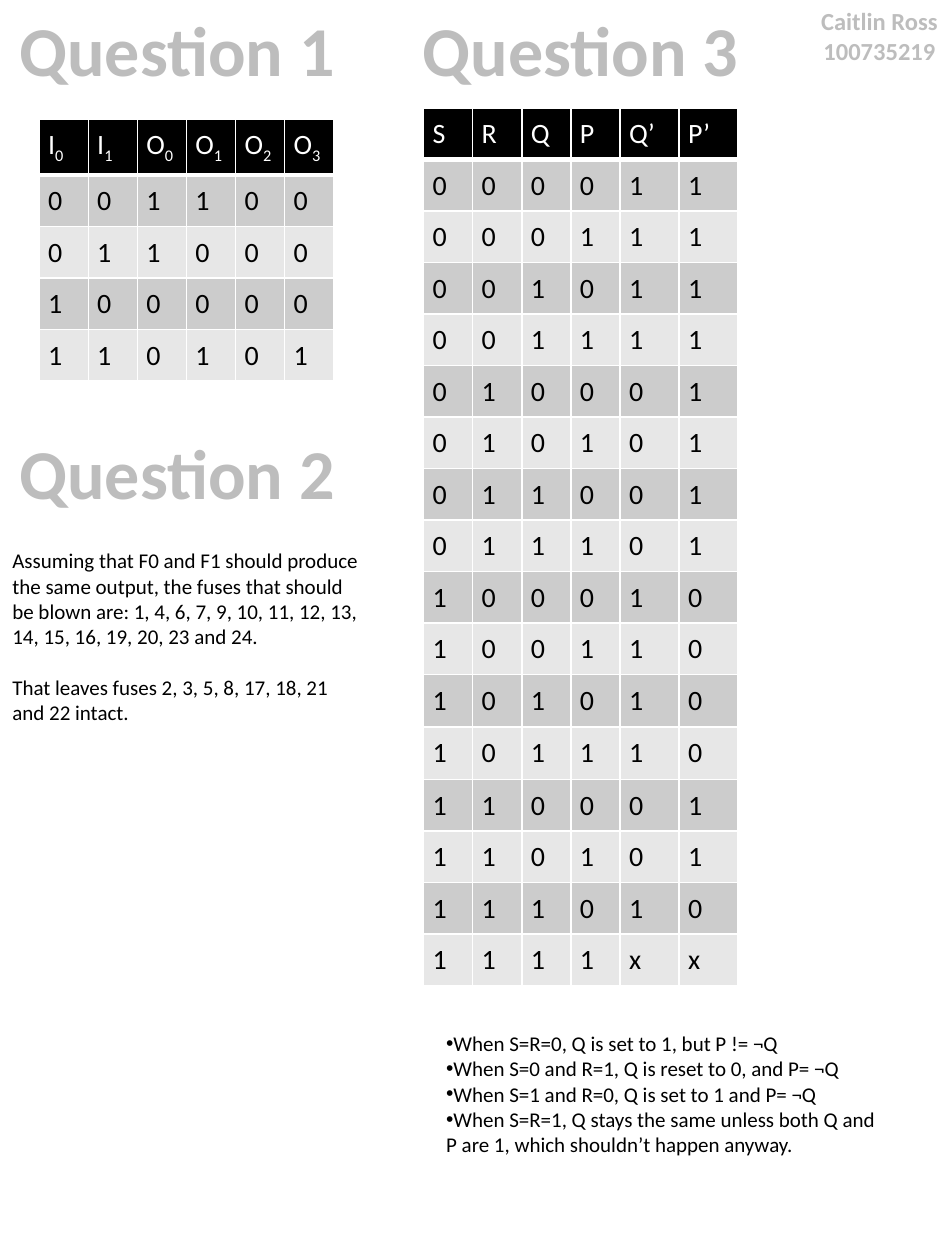
from dataclasses import dataclass
from itertools import product
from typing import Any

from lxml.etree import SubElement
from pptx import Presentation
from pptx.dml.color import RGBColor as Rgb
from pptx.enum.text import MSO_ANCHOR as Anchor, MSO_AUTO_SIZE as AutoSize, PP_ALIGN as Align
from pptx.oxml import parse_xml
from pptx.oxml.ns import nsdecls, qn
from pptx.util import Cm, Pt


@dataclass(frozen=True)
class Theme:
    font: str = "Calibri"
    heading: str = "BDBDBD"
    ink: str = "000000"
    paper: str = "FFFFFF"
    bands: tuple[str, str] = ("CCCCCC", "E7E7E7")
    heading_size: int = 40
    author_size: int = 14
    body_size: int = 12
    cell_size: int = 16
    line_width: int = 1
    header_rule: int = 3


THEME = Theme()


@dataclass(frozen=True)
class Area:
    left: float
    top: float
    width: float
    height: float


@dataclass(frozen=True)
class TextBlock:
    area: Area
    lines: tuple[str, ...]
    size: int
    colour: str = THEME.ink
    bold: bool = False
    align: Align = Align.LEFT
    wrap: bool = True
    gap: float = 0
    bullet: str = ""


@dataclass(frozen=True)
class TruthTable:
    left: float
    top: float
    header: tuple[tuple[str, str], ...]
    rows: tuple[str, ...]
    widths: tuple[float, ...]
    heights: tuple[float, ...]


def apply(target: Any, values: dict[str, Any]) -> None:
    for name, value in values.items():
        setattr(target, name, value)


def add_span(para: Any, text: str, size: int, colour: str, bold: bool = False) -> Any:
    span = para.add_run()
    span.text = text
    apply(span.font, {"name": THEME.font, "size": Pt(size), "bold": bold})
    span.font.color.rgb = Rgb.from_string(colour)
    return span


def fill_text(box: Any, block: TextBlock) -> None:
    area = block.area
    apply(box, {name: Cm(getattr(area, name)) for name in ("left", "top", "width", "height")})
    frame = box.text_frame
    apply(frame, {"word_wrap": block.wrap, "auto_size": AutoSize.SHAPE_TO_FIT_TEXT,
                  "vertical_anchor": Anchor.TOP})
    for index, line in enumerate(block.lines):
        para = frame.add_paragraph() if index else frame.paragraphs[0]
        apply(para, {"alignment": block.align, "space_before": Pt(block.gap if index else 0)})
        if block.bullet:
            props = para._p.get_or_add_pPr()
            props.set("marL", "0")
            props.set("indent", "0")
            SubElement(props, qn("a:buChar")).set("char", block.bullet)
        add_span(para, line, block.size, block.colour, block.bold)


def add_text(page: Any, block: TextBlock) -> None:
    area = block.area
    box = page.shapes.add_textbox(Cm(area.left), Cm(area.top), Cm(area.width), Cm(area.height))
    fill_text(box, block)


def heading(text: str, left: float, top: float) -> TextBlock:
    return TextBlock(Area(left, top, 7.14, 1.96), (text,), THEME.heading_size,
                     THEME.heading, True, Align.CENTER, False)


def style_cell(cell: Any, fill: str, bottom: int) -> None:
    margins = ("margin_left", "margin_right", "margin_top", "margin_bottom")
    apply(cell, dict.fromkeys(margins, Cm(0.18)))
    cell.fill.solid()
    cell.fill.fore_color.rgb = Rgb.from_string(fill)
    props = cell._tc.get_or_add_tcPr()
    for index, side in enumerate("LRTB"):
        width = Pt(bottom if side == "B" else THEME.line_width)
        props.insert(index, parse_xml(
            f'<a:ln{side} {nsdecls("a")} w="{width}"><a:solidFill>'
            f'<a:srgbClr val="{THEME.paper}"/></a:solidFill></a:ln{side}>'))


def add_truth_table(page: Any, spec: TruthTable) -> None:
    table = page.shapes.add_table(
        len(spec.heights), len(spec.widths), Cm(spec.left), Cm(spec.top),
        Cm(sum(spec.widths)), Cm(sum(spec.heights))).table
    for column, width in zip(table.columns, spec.widths):
        column.width = Cm(width)
    for row, height in zip(table.rows, spec.heights):
        row.height = Cm(height)
    for column, (name, subscript) in enumerate(spec.header):
        cell = table.cell(0, column)
        style_cell(cell, THEME.ink, THEME.header_rule)
        para = cell.text_frame.paragraphs[0]
        add_span(para, name, THEME.cell_size, THEME.paper)
        if subscript:
            span = add_span(para, subscript, THEME.cell_size, THEME.paper)
            span._r.get_or_add_rPr().set("baseline", "-25000")
    for row, values in enumerate(spec.rows, 1):
        for column, value in enumerate(values):
            cell = table.cell(row, column)
            style_cell(cell, THEME.bands[(row - 1) % 2], THEME.line_width)
            add_span(cell.text_frame.paragraphs[0], value, THEME.cell_size, THEME.ink)


AUTHOR = TextBlock(Area(16.28, 0, 2.9, 1.45), ("Caitlin Ross", "100735219"),
                   THEME.author_size, THEME.heading, True, Align.CENTER, False)

FUSES = TextBlock(
    Area(0, 10.92, 7.54, 3.84),
    ("Assuming that F0 and F1 should produce the same output, the fuses that should be blown "
     "are: 1, 4, 6, 7, 9, 10, 11, 12, 13, 14, 15, 16, 19, 20, 23 and 24.",
     "That leaves fuses 2, 3, 5, 8, 17, 18, 21 and 22 intact."),
    THEME.body_size, gap=14.6)

LATCH_NOTES = TextBlock(
    Area(8.74, 20.65, 9.32, 2.82),
    ("When S=R=0, Q is set to 1, but P != ¬Q",
     "When S=0 and R=1, Q is reset to 0, and P= ¬Q",
     "When S=1 and R=0, Q is set to 1 and P= ¬Q",
     "When S=R=1, Q stays the same unless both Q and P are 1, which shouldn’t happen anyway."),
    THEME.body_size, bullet="•")

DECODER = TruthTable(
    0.79, 2.4,
    (("I", "0"), ("I", "1"), ("O", "0"), ("O", "1"), ("O", "2"), ("O", "3")),
    ("001100", "011000", "100000", "110101"),
    (0.99,) * 6, (1.02,) * 5)

NEXT_STATES = ["11"] * 4 + ["01"] * 4 + ["10"] * 4 + ["01", "01", "10", "xx"]
LATCH = TruthTable(
    8.54, 2.18,
    tuple((name, "") for name in ("S", "R", "Q", "P", "Q’", "P’")),
    tuple("".join(bits) + after for bits, after in zip(product("01", repeat=4), NEXT_STATES)),
    (0.99,) * 4 + (1.19,) * 2,
    (1.02,) * 11 + (1.06,) * 2 + (1.02,) * 4)


def main() -> None:
    deck = Presentation()
    apply(deck, {"slide_width": Cm(19.05), "slide_height": Cm(25.4)})
    page = deck.slides.add_slide(deck.slide_layouts[1])
    fill_text(page.shapes.title, heading("Question 1", 0, 0))
    fill_text(page.placeholders[1], LATCH_NOTES)
    for block in (AUTHOR, heading("Question 2", 0, 8.53), FUSES, heading("Question 3", 8.13, 0)):
        add_text(page, block)
    for spec in (DECODER, LATCH):
        add_truth_table(page, spec)
    deck.save("out.pptx")


if __name__ == "__main__":
    main()
